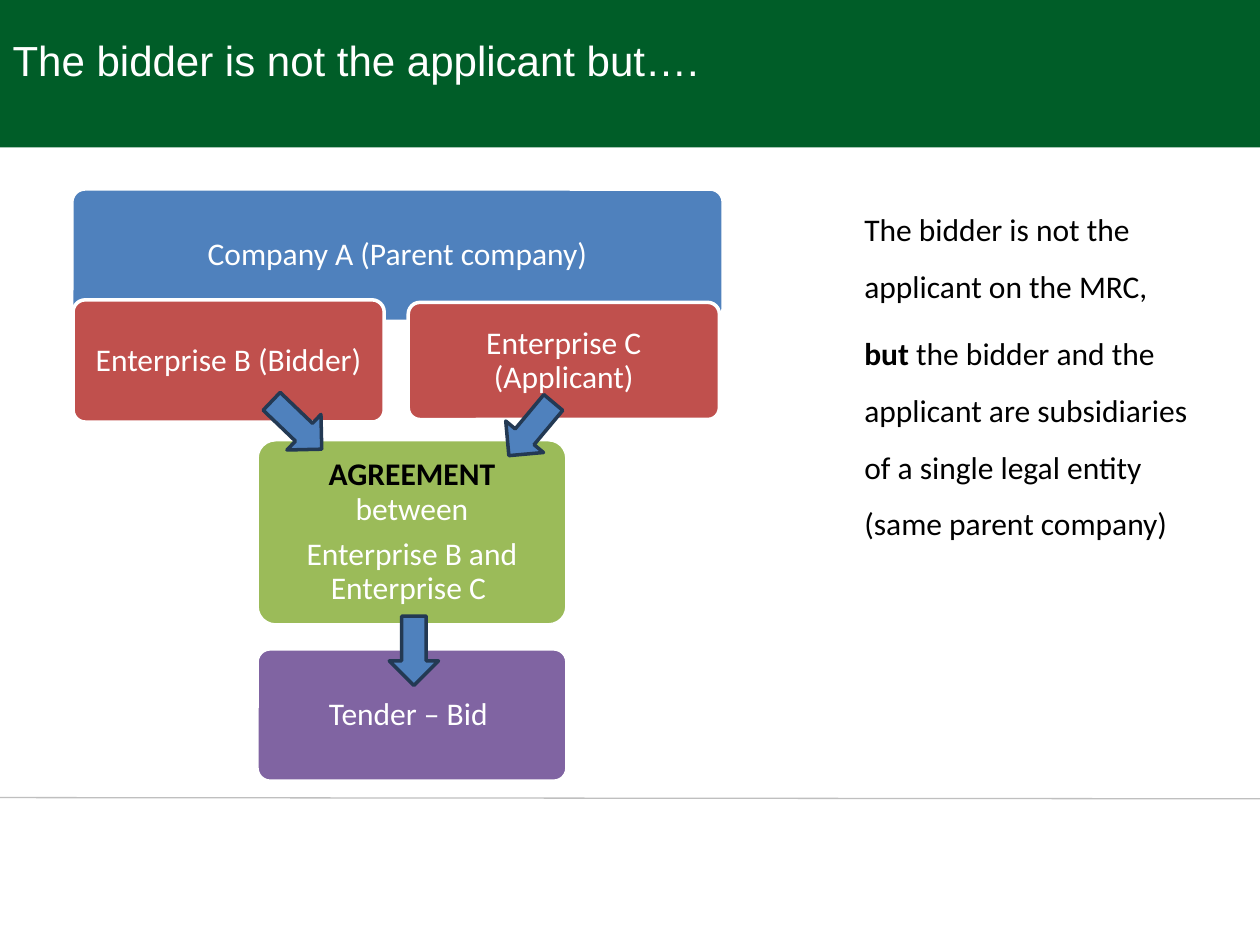
"""Build a slide on a bidder and an applicant that share a parent company."""
import pptx
import pptx.dml.color
import pptx.enum.shapes
import pptx.enum.text
import pptx.oxml
import pptx.util
from pptx.util import Inches

hues = {
    "band": "005D28", "rule": "BFBFBF", "blue": "4F81BD", "red": "C0504D",
    "green": "9BBB59", "violet": "8064A2", "edge": "233953",
    "white": "FFFFFF", "black": "000000",
}
kinds = pptx.enum.shapes.MSO_SHAPE
align = pptx.enum.text.PP_ALIGN
anchor = pptx.enum.text.MSO_ANCHOR


def tint(name):
    return pptx.dml.color.RGBColor.from_string(hues[name])


def draw(kind, place, fill, edge=None):
    shape = slide.shapes.add_shape(kind, *map(Inches, place))
    shape.shadow.inherit = False
    shape.fill.solid()
    shape.fill.fore_color.rgb = tint(fill)
    if edge:
        shape.line.color.rgb = tint(edge)
        shape.line.width = pptx.util.Pt(2)
    else:
        shape.line.fill.background()
    return shape


deck = pptx.Presentation()
deck.slide_width, deck.slide_height = Inches(10), Inches(7.5)
slide = deck.slides.add_slide(deck.slide_layouts[1])

band = draw(kinds.RECTANGLE, (0, 0, 10, 1.17), "band")
slide.shapes._spTree.insert(2, band._element)
rule = slide.shapes.add_connector(
    pptx.enum.shapes.MSO_CONNECTOR.STRAIGHT,
    Inches(0), Inches(6.33), Inches(10), Inches(6.34))
rule.line.color.rgb = tint("rule")
rule.line.width = pptx.util.Pt(0.75)
rule._element.spPr.append(pptx.oxml.parse_xml(
    '<a:effectLst xmlns:a="http://schemas.openxmlformats.org/drawingml/2006/main"/>'))

title = slide.shapes.title
title.left, title.top, title.width, title.height = map(Inches, (0, 0.22, 7.99, 0.5))
title.text_frame.text = "The bidder is not the applicant but…."
title.text_frame.vertical_anchor = anchor.TOP
title.text_frame.auto_size = pptx.enum.text.MSO_AUTO_SIZE.NONE
head = title.text_frame.paragraphs[0]
head.alignment = align.LEFT
head.font.name, head.font.size = "Arial", pptx.util.Pt(24)
head.font.color.rgb = tint("white")

body = slide.placeholders[1]
body.left, body.top, body.width, body.height = map(Inches, (6.26, 1.47, 3.31, 2.86))
body.text_frame.auto_size = pptx.enum.text.MSO_AUTO_SIZE.NONE
body.text_frame.text = "The bidder is not the applicant on the MRC,"
claim = body.text_frame.add_paragraph()
for text in ("but ", "the bidder and the applicant are subsidiaries "
             "of a single legal entity (same parent company)"):
    claim.add_run().text = text
claim.runs[0].font.bold = True
for para, gap in zip(body.text_frame.paragraphs, (0, 6)):
    para.level = 1
    para.line_spacing = 1.5
    para.space_before = pptx.util.Pt(gap)
    props = para._p.get_or_add_pPr()
    props.set("marL", str(Inches(0.5)))
    props.set("indent", "0")
    props.append(pptx.oxml.parse_xml(
        '<a:buNone xmlns:a="http://schemas.openxmlformats.org/drawingml/2006/main"/>'))
    for run in para.runs:
        run.font.name, run.font.size = "Calibri", pptx.util.Pt(18)
        run.font.color.rgb = tint("black")

boxes = [
    ((0.57, 1.5, 5.17, 1.05), "blue", ["Company A (Parent company)"]),
    ((0.58, 2.38, 2.47, 0.97), "red", ["Enterprise B (Bidder)"]),
    ((2.04, 3.49, 2.46, 1.47), "green",
     ["AGREEMENT |between", "Enterprise B and Enterprise C "]),
    ((2.04, 5.15, 2.46, 1.05), "violet", ["Tender – Bid "]),
    ((3.24, 2.4, 2.47, 0.93), "red", ["Enterprise C (Applicant)"]),
]
for place, fill, lines in boxes:
    box = draw(kinds.ROUNDED_RECTANGLE, place, fill, "white")
    box.adjustments[0] = 0.1
    frame = box.text_frame
    frame.word_wrap = True
    frame.vertical_anchor = anchor.MIDDLE
    frame.margin_left = frame.margin_right = Inches(0.07)
    frame.margin_top = frame.margin_bottom = Inches(0.07)
    for i, line in enumerate(lines):
        para = frame.add_paragraph() if i else frame.paragraphs[0]
        para.alignment = align.CENTER
        para.line_spacing = 0.9
        para.space_after = pptx.util.Pt(6.3 if i < len(lines) - 1 else 0)
        strong, mark, rest = line.rpartition("|")
        for text, hue in ((strong, "black"), (rest, "white")):
            if text:
                run = para.add_run()
                run.text = text
                run.font.name, run.font.size = "Calibri", pptx.util.Pt(18)
                run.font.bold = hue == "black"
                run.font.color.rgb = tint(hue)

for left, top, turn in ((2.08, 3.18, 43.7), (3.94, 3.21, 129.9), (3.01, 4.97, 90)):
    arrow = draw(kinds.RIGHT_ARROW, (left, top, 0.55, 0.39), "blue", "edge")
    arrow.rotation = turn

deck.save("out.pptx")
